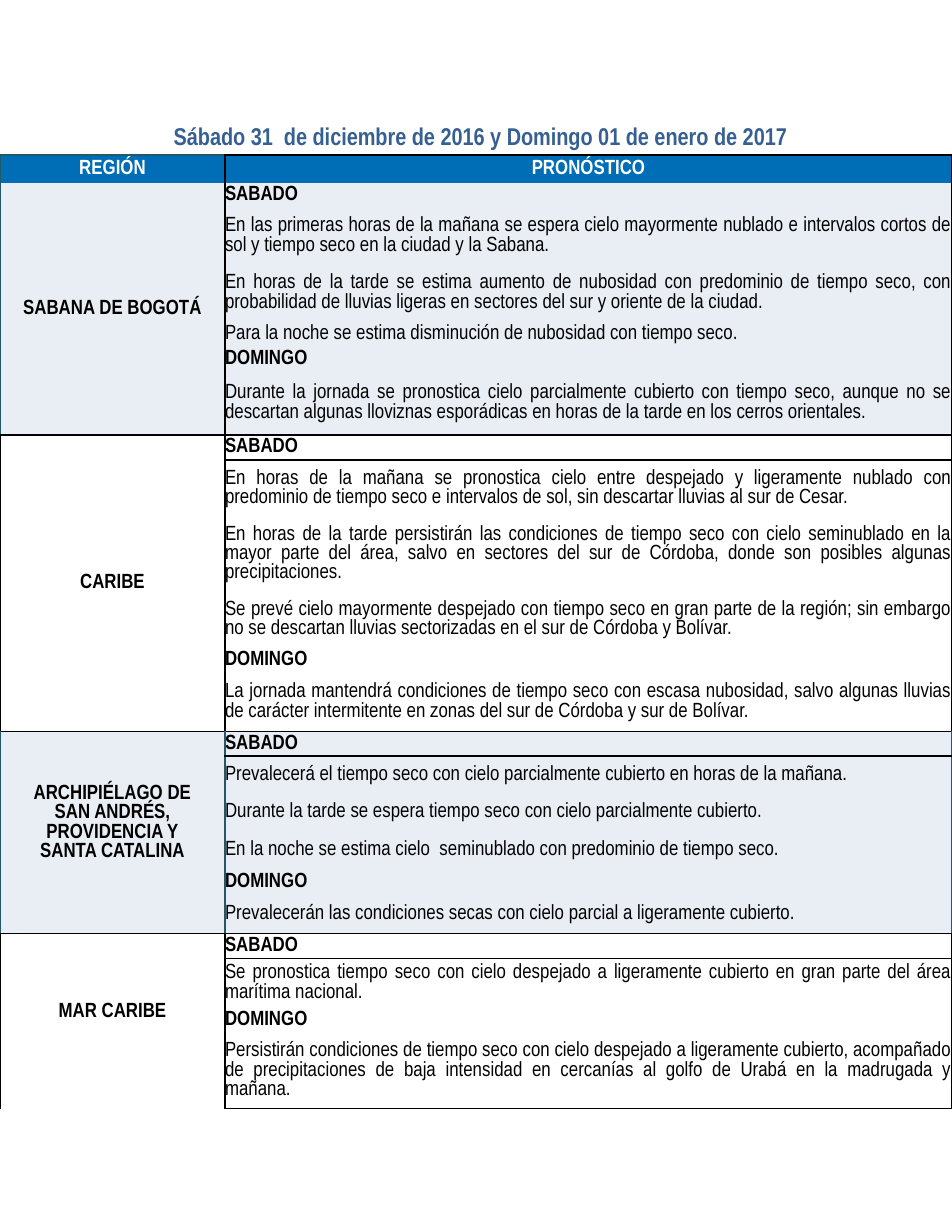
from pptx import Presentation
from pptx.dml.color import RGBColor
from pptx.enum.text import MSO_ANCHOR as Anchor, PP_ALIGN as Align
from pptx.oxml import parse_xml
from pptx.oxml.ns import nsdecls, qn
from pptx.util import Pt

PX = 6808
FONT = "Arial Narrow"
NO_GRID = "{2D5ABB26-0587-4C30-8999-92F81FD0307C}"
BLACK = RGBColor(0x00, 0x00, 0x00)
WHITE = RGBColor(0xFF, 0xFF, 0xFF)
TEAL = RGBColor(0x21, 0x59, 0x68)
BLUE = RGBColor(0x00, 0x6E, 0xB6)
PALE = RGBColor(0xE9, 0xED, 0xF4)
NAVY = RGBColor(0x37, 0x60, 0x92)

WIDTHS = (225, 727)
HEAD = 28
LINE = 19
SAT, SUN = "SABADO", "DOMINGO"

# Name, space under the name, fill, outer edge, inner edge, (row height, text)
REGIONS = [
    ("SABANA DE BOGOTÁ", 0, PALE, TEAL, BLACK, [
        (24, SAT),
        (57, "En las primeras horas de la mañana se espera cielo mayormente nublado e "
             "intervalos cortos de sol y tiempo seco en la ciudad y la Sabana."),
        (57, "En horas de la tarde se estima aumento de nubosidad con predominio de tiempo "
             "seco, con probabilidad de lluvias ligeras en sectores del sur y oriente de la "
             "ciudad."),
        (24, "Para la noche se estima disminución de nubosidad con tiempo seco."),
        (25, SUN),
        (64, "Durante la jornada se pronostica cielo parcialmente cubierto con tiempo seco, "
             "aunque no se descartan algunas lloviznas esporádicas en horas de la tarde en "
             "los cerros orientales."),
    ]),
    ("CARIBE", 0, WHITE, BLACK, BLACK, [
        (24, SAT),
        (57, "En horas de la mañana se pronostica cielo entre despejado y ligeramente nublado "
             "con predominio de tiempo seco e intervalos de sol, sin descartar lluvias al sur "
             "de Cesar."),
        (74, "En horas de la tarde persistirán las condiciones de tiempo seco con cielo "
             "seminublado en la mayor parte del área, salvo en sectores del sur de Córdoba, "
             "donde son posibles algunas precipitaciones."),
        (57, "Se prevé cielo mayormente despejado con tiempo seco en gran parte de la región; "
             "sin embargo no se descartan lluvias sectorizadas en el sur de Córdoba y Bolívar."),
        (24, SUN),
        (59, "La jornada mantendrá condiciones de tiempo seco con escasa nubosidad, salvo "
             "algunas lluvias de carácter intermitente en zonas del sur de Córdoba y sur de "
             "Bolívar."),
    ]),
    ("ARCHIPIÉLAGO DE\vSAN ANDRÉS,\vPROVIDENCIA Y\vSANTA CATALINA", LINE, PALE, TEAL, TEAL, [
        (24, SAT),
        (37, "Prevalecerá el tiempo seco con cielo parcialmente cubierto en horas de la mañana."),
        (38, "Durante la tarde se espera tiempo seco con cielo parcialmente cubierto."),
        (39, "En la noche se estima cielo  seminublado con predominio de tiempo seco."),
        (24, SUN),
        (39, "Prevalecerán las condiciones secas con cielo parcial a ligeramente cubierto."),
    ]),
    ("MAR CARIBE", LINE, WHITE, BLACK, BLACK, [
        (24, SAT),
        (48, "Se pronostica tiempo seco con cielo despejado a ligeramente cubierto en gran "
             "parte del área marítima nacional."),
        (25, SUN),
        (76, "Persistirán condiciones de tiempo seco con cielo despejado a ligeramente "
             "cubierto, acompañado de precipitaciones de baja intensidad en cercanías al "
             "golfo de Urabá en la madrugada y mañana."),
    ]),
]


def style(para, size, color, bold, align):
    para.alignment = align
    font = para.font
    font.name, font.size, font.bold = FONT, Pt(size), bold
    font.color.rgb = color


def write(cell, text, color, bold, align, under=0):
    cell.margin_left = cell.margin_right = cell.margin_top = 0
    cell.margin_bottom = under * PX
    cell.vertical_anchor = Anchor.MIDDLE
    para = cell.text_frame.paragraphs[0]
    para.text = text
    style(para, 11, color, bold, align)


def paint(cell, fill, **edges):
    """Fill a cell and draw its edges, given in the order L, R, T, B."""
    props = cell._tc.get_or_add_tcPr()
    for side, color in edges.items():
        if color is not None:
            props.append(parse_xml(
                f'<a:ln{side} {nsdecls("a")} w="{Pt(1)}"><a:solidFill>'
                f'<a:srgbClr val="{color}"/></a:solidFill></a:ln{side}>'))
    cell.fill.solid()
    cell.fill.fore_color.rgb = fill


def add_title(slide, x, y, w, h):
    frame = slide.shapes.add_textbox(x * PX, y * PX, w * PX, h * PX).text_frame
    frame.word_wrap = True
    frame.vertical_anchor = Anchor.MIDDLE
    para = frame.paragraphs[0]
    para.text = "Sábado 31  de diciembre de 2016 y Domingo 01 de enero de 2017"
    style(para, 13, NAVY, True, Align.CENTER)


def fill_region(table, top, region):
    """Fill the rows of one region from row top; return the next free row."""
    name, under, fill, outer, inner, rows = region
    last = top + len(rows) - 1
    for row, (height, text) in enumerate(rows, top):
        table.rows[row].height = height * PX
        left, right = table.cell(row, 0), table.cell(row, 1)
        upper = BLACK if row == top and top > 1 else None
        lower = BLACK if row == last else None
        paint(left, fill, L=outer, R=inner, T=upper, B=lower)
        paint(right, fill, L=inner, R=inner, T=upper, B=lower)
        write(right, text, BLACK, text in (SAT, SUN), Align.JUSTIFY)
    first = table.cell(top, 0)
    first.merge(table.cell(last, 0))
    write(first, name, BLACK, True, Align.CENTER, under)
    return last + 1


def add_forecast(slide, x, y):
    heights = [HEAD] + [row[0] for region in REGIONS for row in region[-1]]
    table = slide.shapes.add_table(len(heights), 2, x * PX, y * PX,
                                   sum(WIDTHS) * PX, sum(heights) * PX).table
    table.first_row = table.horz_banding = False
    table._tbl.tblPr.find(qn("a:tableStyleId")).text = NO_GRID
    for col, width in zip(table.columns, WIDTHS):
        col.width = width * PX

    table.rows[0].height = HEAD * PX
    heads = [("REGIÓN", TEAL), ("PRONÓSTICO", BLACK)]
    for cell, (text, edge) in zip(table.rows[0].cells, heads):
        paint(cell, BLUE, L=edge, R=BLACK, T=edge)
        write(cell, text, WHITE, True, Align.CENTER)

    row = 1
    for region in REGIONS:
        row = fill_region(table, row, region)


def main():
    deck = Presentation()
    deck.slide_width, deck.slide_height = 952 * PX, 1232 * PX
    slide = deck.slides.add_slide(deck.slide_layouts[6])
    add_title(slide, 126, 114, 708, 43)
    add_forecast(slide, 0, 155)
    deck.save("out.pptx")


if __name__ == "__main__":
    main()
